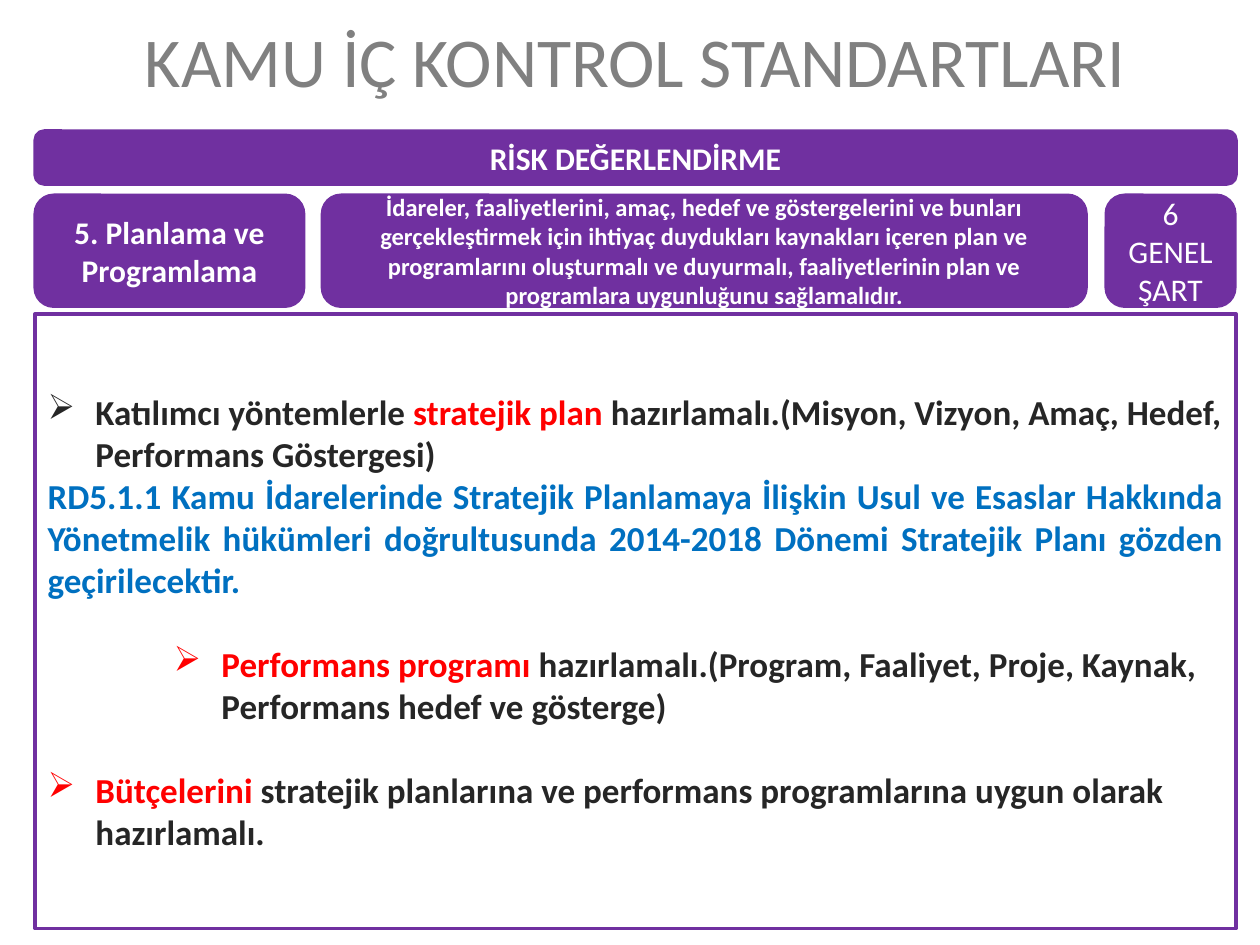
import pptx
import pptx.util
import pptx.dml.color
import pptx.enum.shapes
import pptx.enum.text
import pptx.oxml.ns
import lxml.etree

Inches = pptx.util.Inches
Pt = pptx.util.Pt
Align = pptx.enum.text.PP_ALIGN
Kind = pptx.enum.shapes.MSO_SHAPE


class Theme:
    font = "Calibri"
    purple = "7030A0"
    white = "FFFFFF"
    gray = "808080"
    dark = "262626"
    red = "FF0000"
    blue = "0070C0"
    title = 40
    body = 20
    label = 18
    small = 14


def style(run, size, color, bold):
    font = run.font
    font.name = Theme.font
    font.size = Pt(size)
    font.bold = bold
    font.color.rgb = pptx.dml.color.RGBColor.from_string(color)


def add_box(kind, left, top, width, height, fill):
    box = slide.shapes.add_shape(
        kind, Inches(left), Inches(top), Inches(width), Inches(height))
    box.shadow.inherit = False
    box.fill.solid()
    box.fill.fore_color.rgb = pptx.dml.color.RGBColor.from_string(fill)
    box.line.color.rgb = pptx.dml.color.RGBColor.from_string(Theme.purple)
    box.line.width = Pt(2)
    box.text_frame.word_wrap = True
    box.text_frame.vertical_anchor = pptx.enum.text.MSO_ANCHOR.MIDDLE
    return box.text_frame


deck = pptx.Presentation()
deck.slide_width = Inches(10)
deck.slide_height = Inches(7.5)
slide = deck.slides.add_slide(deck.slide_layouts[6])

title = slide.shapes.add_textbox(
    Inches(0.14), Inches(0), Inches(9.8), Inches(0.94)).text_frame
title.word_wrap = True
title.vertical_anchor = pptx.enum.text.MSO_ANCHOR.MIDDLE
title.text = "KAMU İÇ KONTROL STANDARTLARI"
title.paragraphs[0].alignment = Align.CENTER
style(title.paragraphs[0].runs[0], Theme.title, Theme.gray, False)

labels = [
    (0.28, 1.04, 9.53, 0.42, "RİSK DEĞERLENDİRME", Theme.label, True),
    (0.28, 1.55, 2.13, 0.88, "5. Planlama ve Programlama", Theme.label, True),
    (2.56, 1.55, 6.06, 0.88,
     "İdareler, faaliyetlerini, amaç, hedef ve göstergelerini ve bunları "
     "gerçekleştirmek için ihtiyaç duydukları kaynakları içeren plan ve "
     "programlarını oluşturmalı ve duyurmalı, faaliyetlerinin plan ve "
     "programlara uygunluğunu sağlamalıdır.", Theme.small, True),
    (8.78, 1.55, 1.02, 0.88, "6 GENEL ŞART", Theme.label, False),
]
for left, top, width, height, text, size, bold in labels:
    frame = add_box(Kind.ROUNDED_RECTANGLE, left, top, width, height, Theme.purple)
    frame.text = text
    para = frame.paragraphs[0]
    para.alignment = Align.CENTER
    style(para.runs[0], size, Theme.white, bold)

items = [
    (0, True, 0, [
        ("Katılımcı yöntemlerle ", Theme.dark),
        ("stratejik plan ", Theme.red),
        ("hazırlamalı.(Misyon, Vizyon, Amaç, Hedef, Performans Göstergesi)",
         Theme.dark)]),
    (0, False, 0, [
        ("RD5.1.1 Kamu İdarelerinde Stratejik Planlamaya İlişkin Usul ve "
         "Esaslar Hakkında Yönetmelik hükümleri doğrultusunda 2014-2018 "
         "Dönemi Stratejik Planı gözden geçirilecektir.", Theme.blue)]),
    (2, True, 24, [
        ("Performans programı ", Theme.red),
        ("hazırlamalı.(Program, Faaliyet, Proje, Kaynak, Performans hedef "
         "ve gösterge)", Theme.dark)]),
    (0, True, 24, [
        ("Bütçelerini", Theme.red),
        (" stratejik planlarına ve performans programlarına uygun olarak "
         "hazırlamalı.", Theme.dark)]),
]
frame = add_box(Kind.RECTANGLE, 0.28, 2.49, 9.53, 4.88, Theme.white)
for index, (level, bullet, gap, parts) in enumerate(items):
    para = frame.add_paragraph() if index else frame.paragraphs[0]
    para.level = level
    para.alignment = Align.LEFT if bullet else Align.JUSTIFY
    if gap:
        para.space_before = Pt(gap)
    if bullet:
        props = para._p.get_or_add_pPr()
        props.set("marL", str(Inches(level * 0.5 + 0.38)))
        props.set("indent", str(Inches(-0.38)))
        mark = lxml.etree.SubElement(props, pptx.oxml.ns.qn("a:buChar"))
        mark.set("char", "➢")
    for text, color in parts:
        run = para.add_run()
        run.text = text
        style(run, Theme.body, color, True)

deck.save("out.pptx")
